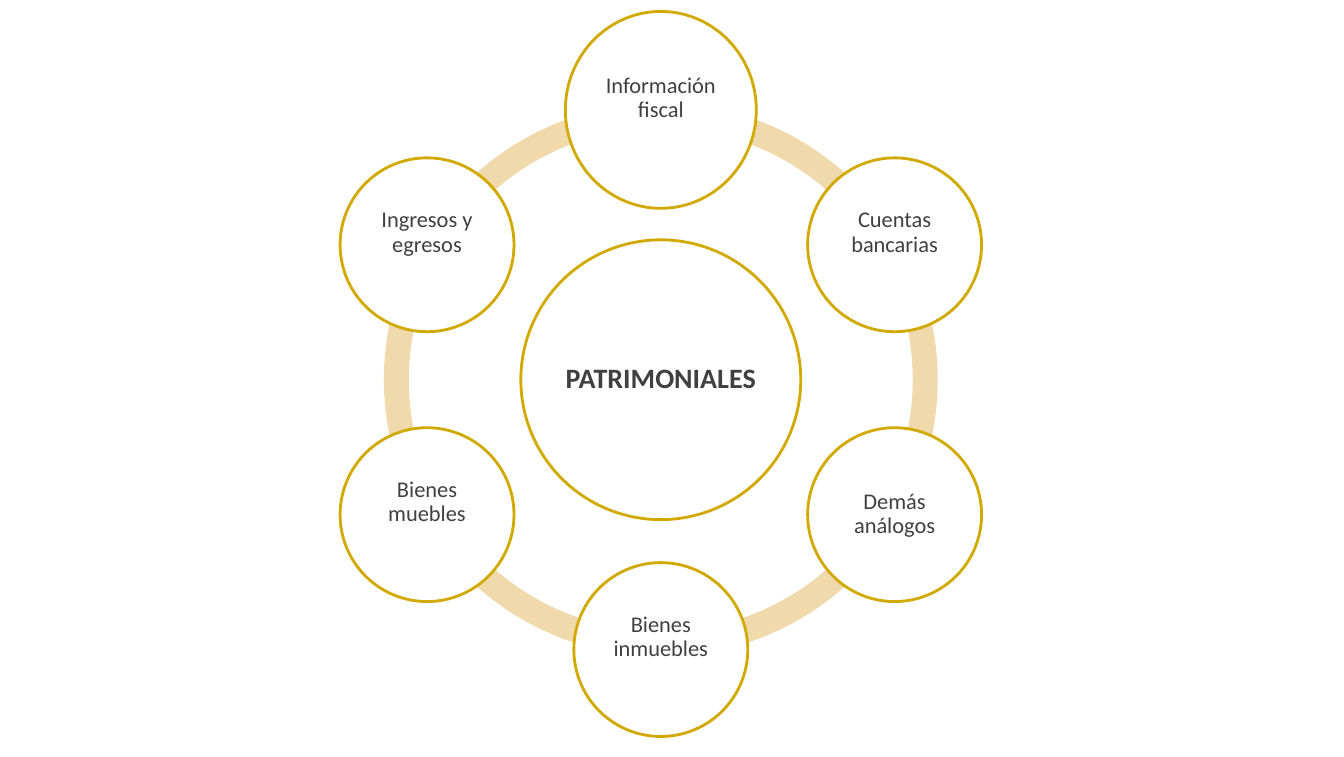
from math import cos, radians, sin

from pptx import Presentation
from pptx.dml.color import RGBColor
from pptx.enum.shapes import MSO_SHAPE
from pptx.enum.text import MSO_ANCHOR, PP_ALIGN
from pptx.util import Inches, Pt

ARC, OVAL = MSO_SHAPE.BLOCK_ARC, MSO_SHAPE.OVAL
MIDDLE, CENTER = MSO_ANCHOR.MIDDLE, PP_ALIGN.CENTER

SAND = RGBColor(0xF0, 0xD9, 0xAB)
GOLD = RGBColor(0xD1, 0xA9, 0x00)
WHITE = RGBColor(0xFF, 0xFF, 0xFF)
GRAY = RGBColor(0x40, 0x40, 0x40)

PX = 914400 / 101
CX, CY = 661, 380          # centre of the wheel
RING, ORBIT = 554, 270     # ring diameter, distance to the outer circles
HUB, NODE = 280, 174       # circle diameters
MARGIN, LIFT = 2, 24       # text inset, extra bottom inset that raises a label

# label, width, height, extra bottom inset; clockwise from the top
NODES = [
    ("Información fiscal", 191, 197, LIFT),
    ("Cuentas bancarias", NODE, NODE, LIFT),
    ("Demás análogos", NODE, NODE, 0),
    ("Bienes inmuebles", NODE, NODE, LIFT),
    ("Bienes muebles", NODE, NODE, LIFT),
    ("Ingresos y egresos", NODE, NODE, LIFT),
]
STEP = 360 // len(NODES)


def add_centered(kind, x, y, w, h, fill):
    sp = s.shapes.add_shape(kind, *(round(v * PX) for v in (x - w / 2, y - h / 2, w, h)))
    sp.shadow.inherit = False
    sp.fill.solid()
    sp.fill.fore_color.rgb = fill
    return sp


def add_circle(text, x, y, w, h, lift, font):
    sp = add_centered(OVAL, x, y, w, h, WHITE)
    sp.line.color.rgb = GOLD
    sp.line.width = Pt(2)
    tf = sp.text_frame
    frame = {"word_wrap": True, "vertical_anchor": MIDDLE,
             "margin_left": round(MARGIN * PX), "margin_right": round(MARGIN * PX),
             "margin_top": round(MARGIN * PX), "margin_bottom": round((MARGIN + lift) * PX)}
    for name, value in frame.items():
        setattr(tf, name, value)
    p = tf.paragraphs[0]
    p.alignment = CENTER
    p.line_spacing = 0.9
    r = p.add_run()
    r.text = text
    for name, value in font.items():
        setattr(r.font, name, value)
    r.font.color.rgb = GRAY


prs = Presentation()
prs.slide_width, prs.slide_height = Inches(13.31), Inches(7.5)
s = prs.slides.add_slide(prs.slide_layouts[6])

# Ring, one arc between each pair of neighbours
for i in reversed(range(len(NODES))):
    start = (270 + i * STEP) % 360
    sp = add_centered(ARC, CX, CY, RING, RING, SAND)
    sp.line.fill.background()
    # Adjustments count 0.6 per degree
    for k, value in enumerate((start * 0.6, (start + STEP) % 360 * 0.6, 0.045)):
        sp.adjustments[k] = value

# Hub
add_circle("PATRIMONIALES", CX, CY, HUB, HUB, 0,
           {"name": "Calibri", "size": Pt(20), "bold": True})

# Outer circles
for i, (text, w, h, lift) in enumerate(NODES):
    angle = radians(i * STEP - 90)
    add_circle(text, CX + ORBIT * cos(angle), CY + ORBIT * sin(angle), w, h, lift,
               {"name": "Calibri", "size": Pt(16), "bold": False})

prs.save("out.pptx")
